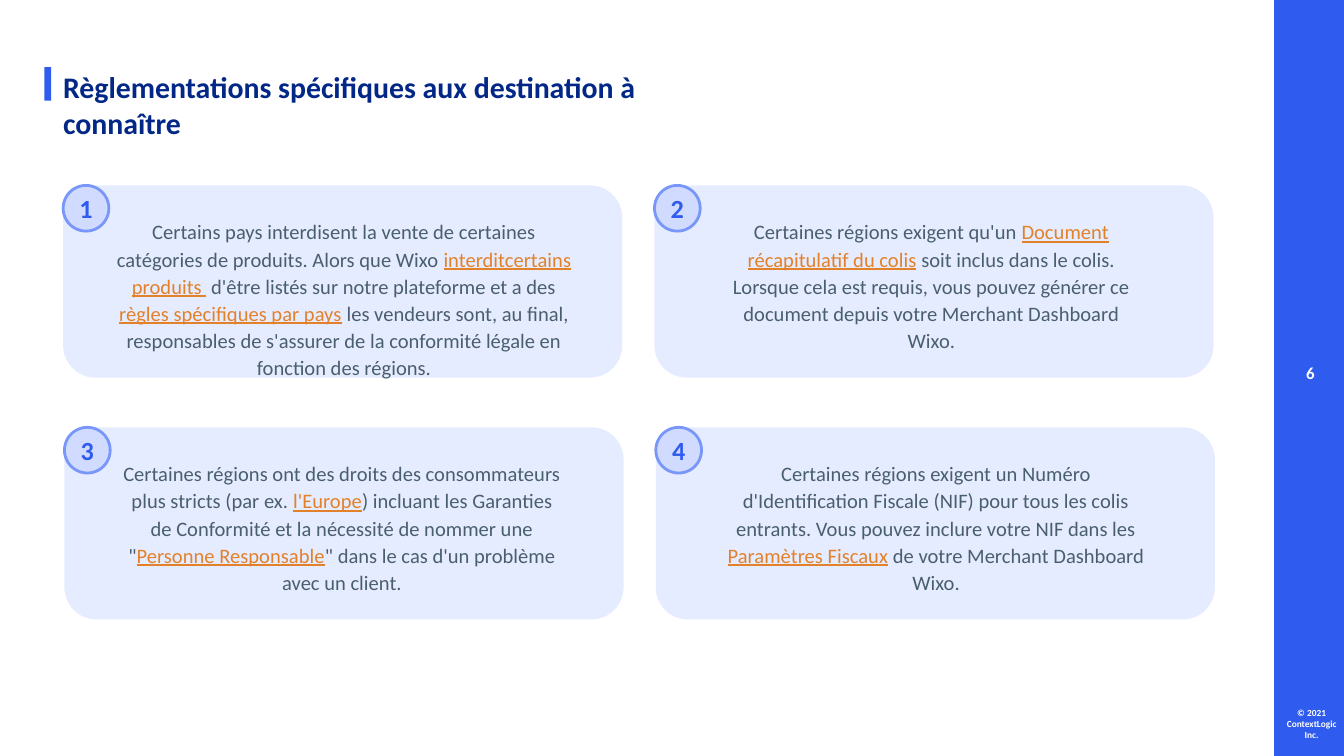
import dataclasses

import pptx
import pptx.dml.color
import pptx.enum.shapes
import pptx.enum.text
import pptx.util

Pt = pptx.util.Pt
Shape = pptx.enum.shapes.MSO_SHAPE
Align = pptx.enum.text.PP_ALIGN
Anchor = pptx.enum.text.MSO_ANCHOR
Fit = pptx.enum.text.MSO_AUTO_SIZE

FONT = "Calibri"
BLUE, NAVY, WHITE = "305BEF", "022786", "FFFFFF"
PALE, DISC, RING = "E5ECFF", "D0DBFF", "7996F9"
GREY, ORANGE = "4A5F6E", "E3812B"

# Card grid
LEFT, TOP = 33.84, 99.36
STEP_X, STEP_Y = 316.8, 129.6
NUDGE = 0.72
CARD_W, CARD_H = 299.52, 102.96
BADGE = 24.48


@dataclasses.dataclass
class Card:
    text: str  # link phrases stand between bars
    left: float
    width: float
    height: float = 86.4


CARDS = [
    Card("Certains pays interdisent la vente de certaines catégories de produits. "
         "Alors que Wixo |interditcertains produits | d'être listés sur notre "
         "plateforme et a des |règles spécifiques par pays| les vendeurs sont, au "
         "final, responsables de s'assurer de la conformité légale en fonction "
         "des régions.", 50.4, 267.84),
    Card("Certaines régions exigent qu'un |Document récapitulatif du colis| soit "
         "inclus dans le colis. Lorsque cela est requis, vous pouvez générer ce "
         "document depuis votre Merchant Dashboard Wixo.", 377.28, 243.36),
    Card("Certaines régions ont des droits des consommateurs plus stricts (par ex. "
         "|l'Europe|) incluant les Garanties de Conformité et la nécessité de "
         "nommer une \"|Personne Responsable|\" dans le cas d'un problème avec un "
         "client.", 58.32, 249.84),
    Card("Certaines régions exigent un Numéro d'Identification Fiscale (NIF) pour "
         "tous les colis entrants. Vous pouvez inclure votre NIF dans les "
         "|Paramètres Fiscaux| de votre Merchant Dashboard Wixo.",
         376.56, 249.84, 72),
]


def color(code: str) -> pptx.dml.color.RGBColor:
    return pptx.dml.color.RGBColor.from_string(code)


def write(shape, text: str, *, size: float, ink: str, bold: bool = False,
          align=Align.CENTER, anchor=Anchor.TOP, inset=(7.2, 7.2, 7.2, 7.2),
          space: float | None = None, after: float = 0, fit=Fit.NONE) -> None:
    """Fill a shape with text; phrases between bars look like links."""
    frame = shape.text_frame
    frame.word_wrap = True
    frame.auto_size = fit
    frame.vertical_anchor = anchor
    (frame.margin_left, frame.margin_top,
     frame.margin_right, frame.margin_bottom) = map(Pt, inset)
    para = frame.paragraphs[0]
    para.alignment = align
    para.space_after = Pt(after)
    if space:
        para.line_spacing = space
    for i, part in enumerate(text.split("|")):
        run = para.add_run()
        run.text = part
        font = run.font
        font.name, font.size, font.bold = FONT, Pt(size), bold
        link = i % 2 == 1
        font.underline = link
        font.color.rgb = color(ORANGE if link else ink)


def draw(slide, kind, box: tuple, fill: str, line: str | None = None):
    shape = slide.shapes.add_shape(kind, *map(Pt, box))
    shape.shadow.inherit = False
    shape.fill.solid()
    shape.fill.fore_color.rgb = color(fill)
    if line:
        shape.line.color.rgb = color(line)
        shape.line.width = Pt(1.5)
    else:
        shape.line.fill.background()
    return shape


def label(slide, box: tuple, text: str, **style) -> None:
    write(slide.shapes.add_textbox(*map(Pt, box)), text, **style)


def add_card(slide, index: int, card: Card) -> None:
    row, col = divmod(index, 2)
    x = LEFT + col * STEP_X + row * NUDGE
    y = TOP + row * STEP_Y
    panel = draw(slide, Shape.ROUNDED_RECTANGLE, (x, y, CARD_W, CARD_H), PALE)
    panel.adjustments[0] = 0.167
    label(slide, (card.left, y + 9.72, card.width, card.height), card.text,
          size=11, ink=GREY, space=1.1, after=8, fit=Fit.SHAPE_TO_FIT_TEXT)
    badge = draw(slide, Shape.OVAL, (x, y, BADGE, BADGE), DISC, RING)
    write(badge, str(index + 1), size=14, ink=BLUE, bold=True,
          anchor=Anchor.MIDDLE, inset=(0, 0, 0, 0))


def main() -> None:
    deck = pptx.Presentation()
    deck.slide_width, deck.slide_height = Pt(720), Pt(405)
    slide = deck.slides.add_slide(deck.slide_layouts[5])

    # Title and its accent bar
    title = slide.shapes.title
    title.left, title.top, title.width, title.height = map(
        Pt, (33.84, 33.12, 341.28, 24.48))
    write(title, "Règlementations spécifiques aux destination à connaître",
          size=16, ink=NAVY, bold=True, align=Align.LEFT, inset=(0, 3.6, 0, 0))
    draw(slide, Shape.RECTANGLE, (23.76, 36, 3.6, 18), BLUE)

    # Side band with page number and copyright
    draw(slide, Shape.RECTANGLE, (682.56, -0.72, 37.44, 407.52), BLUE)
    label(slide, (683.28, 187.2, 37.44, 30.96), "6", size=9, ink=WHITE, bold=True)
    label(slide, (678.24, 371.52, 48.96, 33.84), "© 2021 ContextLogic Inc.",
          size=5, ink=WHITE, bold=True)

    # Numbered cards
    for index, card in enumerate(CARDS):
        add_card(slide, index, card)

    deck.save("out.pptx")


if __name__ == "__main__":
    main()
